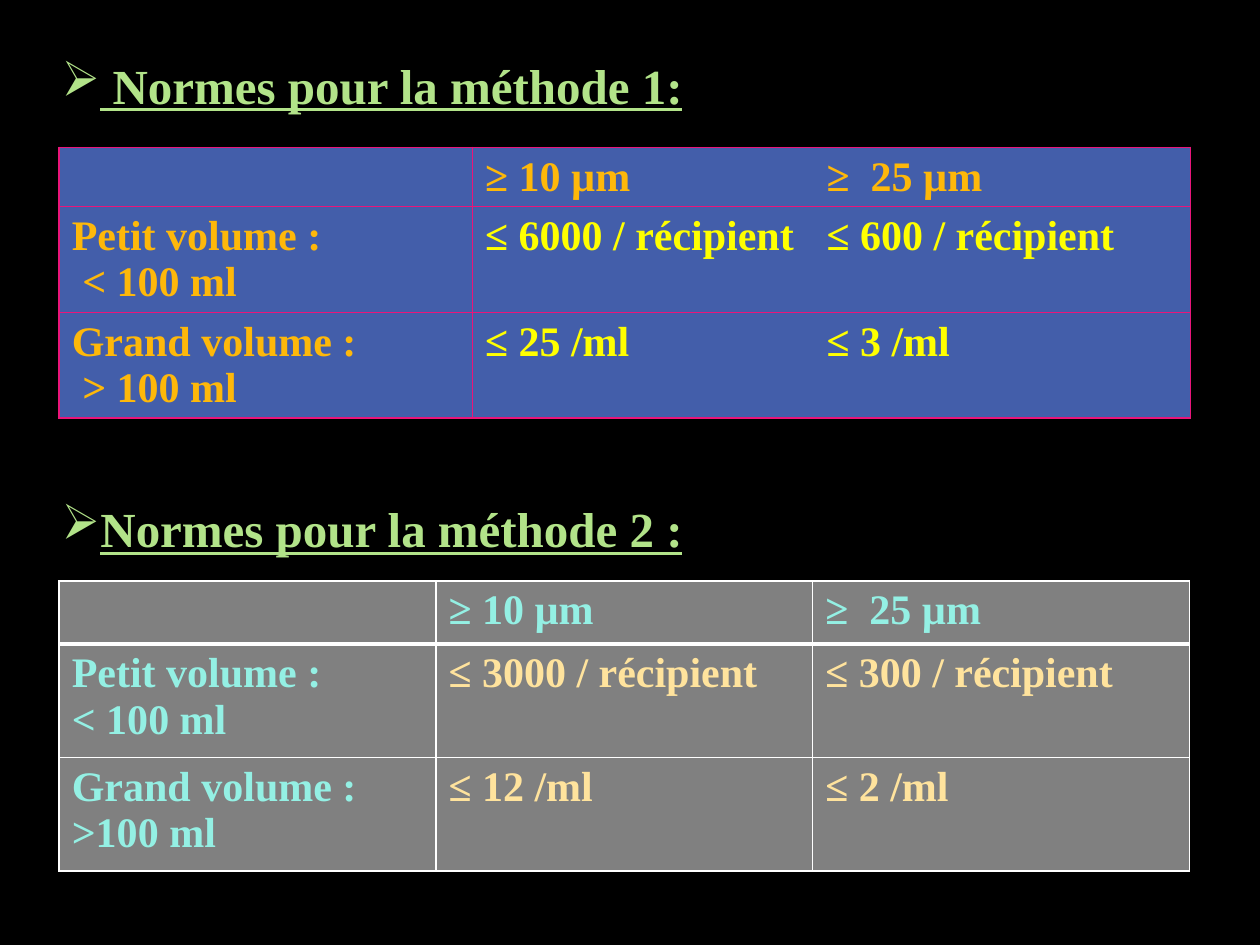
"""Build a slide with two tables of particle limits, one for each method."""
from dataclasses import dataclass

import lxml.etree
import pptx
import pptx.dml.color
import pptx.enum.text
import pptx.oxml.ns
import pptx.util

Inches = pptx.util.Inches
qn = pptx.oxml.ns.qn
FACE = "Times New Roman"
SIDES = {"left": "a:lnL", "right": "a:lnR", "top": "a:lnT", "bottom": "a:lnB"}


@dataclass
class Title:
    text: str
    top: float
    width: float
    height: float
    wrap: bool


@dataclass
class Grid:
    top: float
    cols: list[float]
    rows: list[float]
    fill: str
    edge: str
    rule: float
    split: bool
    label: str
    value: str
    cells: list[list[str]]


HEADS = ["", "≥ 10 µm", "≥  25 µm"]
TITLES = [
    Title(" Normes pour la méthode 1:", 0.39, 7.11, 0.57, True),
    Title("Normes pour la méthode 2 :", 3.91, 5.19, 1.04, False),
]
GRIDS = [
    Grid(1.17, [3.28, 2.71, 2.99], [0.47, 0.84, 0.84], "435EAA", "EA157A", 1, False,
         "FEB80A", "FFFF00", [
             HEADS,
             ["Petit volume :\n < 100 ml", "≤ 6000 / récipient", "≤ 600 / récipient"],
             ["Grand volume :\n > 100 ml", "≤ 25 /ml", "≤ 3 /ml"]]),
    Grid(4.61, [2.99] * 3, [0.5, 0.9, 0.9], "808080", "FFFFFF", 3, True,
         "94F0E4", "FFE39D", [
             HEADS,
             ["Petit volume :\n< 100 ml", "≤ 3000 / récipient", "≤ 300 / récipient"],
             ["Grand volume :\n>100 ml", "≤ 12 /ml", "≤ 2 /ml"]]),
]


def paint(fill, color: str) -> None:
    """Give a fill one solid colour."""
    fill.solid()
    fill.fore_color.rgb = pptx.dml.color.RGBColor.from_string(color)


def style(frame, color: str, **form) -> None:
    """Set the font of every run in a text frame."""
    form = {"name": FACE, "bold": True, **form}
    for para in frame.paragraphs:
        for run in para.runs:
            paint(run.font.fill, color)
            for key, value in form.items():
                setattr(run.font, key, value)


def border(cell, color: str, widths: dict[str, float]) -> None:
    """Draw the cell borders, leaving out those of zero width."""
    props = cell._tc.get_or_add_tcPr()
    for spot, (side, tag) in enumerate(SIDES.items()):
        width = widths[side]
        line = lxml.etree.Element(qn(tag), w=str(pptx.util.Pt(width)))
        props.insert(spot, line)
        if width:
            fill = lxml.etree.SubElement(line, qn("a:solidFill"))
            lxml.etree.SubElement(fill, qn("a:srgbClr"), val=color)
        else:
            lxml.etree.SubElement(line, qn("a:noFill"))


def add_title(slide, title: Title) -> None:
    """Add an underlined heading with an arrow bullet."""
    box = slide.shapes.add_textbox(
        Inches(0.39), Inches(title.top), Inches(title.width), Inches(title.height))
    frame = box.text_frame
    frame.word_wrap = title.wrap
    frame.auto_size = pptx.enum.text.MSO_AUTO_SIZE.SHAPE_TO_FIT_TEXT
    frame.text = title.text
    style(frame, "B2E389", size=pptx.util.Pt(28), underline=True)
    props = frame.paragraphs[0]._p.get_or_add_pPr()
    lxml.etree.SubElement(props, qn("a:buChar"), char="➢")


def add_grid(slide, grid: Grid) -> None:
    """Add a table of limits with a header row and a label column."""
    table = slide.shapes.add_table(
        len(grid.rows), len(grid.cols), Inches(0.47), Inches(grid.top),
        Inches(sum(grid.cols)), Inches(sum(grid.rows))).table
    for col, width in zip(table.columns, grid.cols):
        col.width = Inches(width)
    for r, (row, height) in enumerate(zip(table.rows, grid.rows)):
        row.height = Inches(height)
        for c, cell in enumerate(row.cells):
            cell.text = grid.cells[r][c]
            paint(cell.fill, grid.fill)
            color = grid.value if r and c else grid.label
            style(cell.text_frame, color, size=pptx.util.Pt(24))
            border(cell, grid.edge, {
                "left": 1 if grid.split or c < 2 else 0,
                "right": 1 if grid.split or c != 1 else 0,
                "top": grid.rule if r == 1 else 1,
                "bottom": grid.rule if r == 0 else 1})


def main() -> None:
    """Build and save the slide."""
    deck = pptx.Presentation()
    deck.slide_width, deck.slide_height = Inches(10), Inches(7.5)
    slide = deck.slides.add_slide(deck.slide_layouts[6])
    paint(slide.background.fill, "000000")
    for title, grid in zip(TITLES, GRIDS):
        add_grid(slide, grid)
        add_title(slide, title)
    deck.save("out.pptx")


if __name__ == "__main__":
    main()
